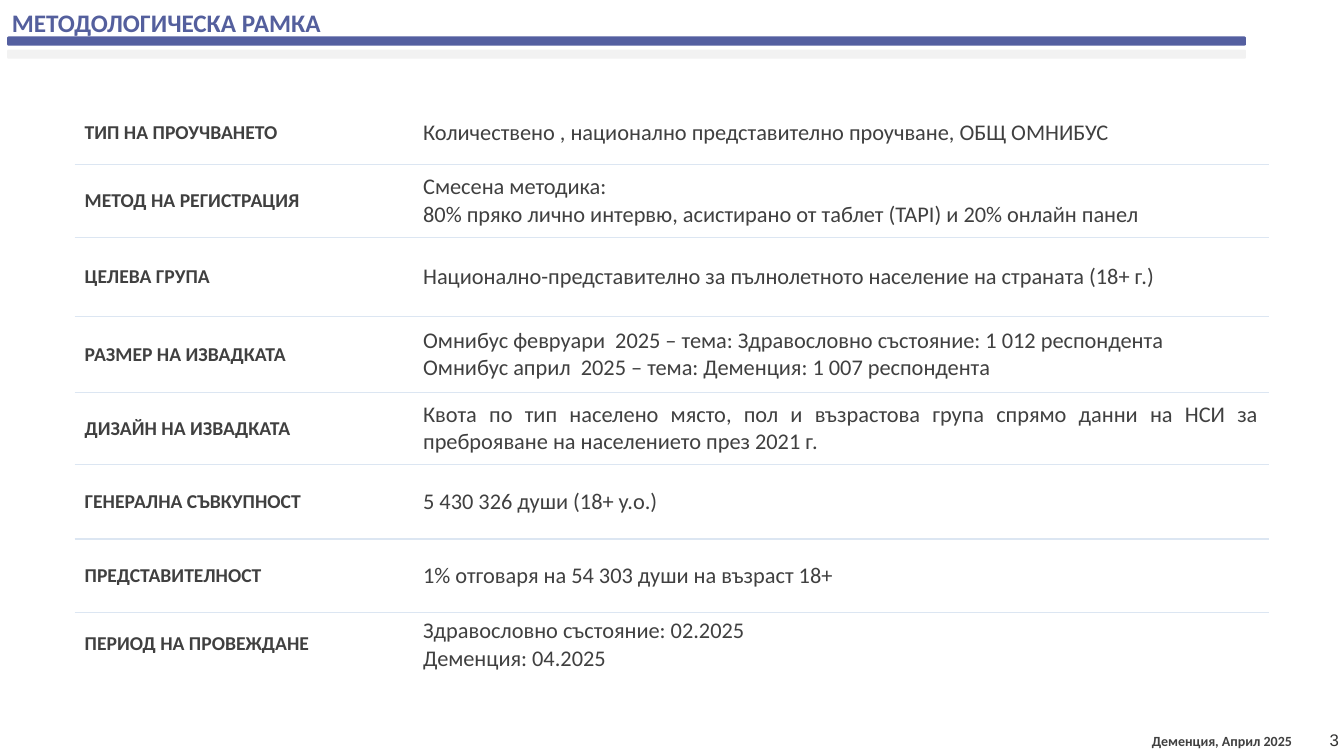
"""Build the methodology slide of a survey report."""
from dataclasses import dataclass

from lxml import etree
from pptx import Presentation
from pptx.dml.color import RGBColor
from pptx.enum.shapes import MSO_SHAPE
from pptx.enum.text import MSO_ANCHOR, PP_ALIGN
from pptx.oxml.ns import qn
from pptx.util import Cm, Pt

ROUND_RECT = MSO_SHAPE.ROUNDED_RECTANGLE
MIDDLE = MSO_ANCHOR.MIDDLE
LEFT, RIGHT, JUSTIFY = PP_ALIGN.LEFT, PP_ALIGN.RIGHT, PP_ALIGN.JUSTIFY


@dataclass(frozen=True)
class Theme:
    font: str = "Calibri"
    number_font: str = "Arial"
    bar: str = "545FA0"
    under_bar: str = "F2F2F2"
    title: str = "545F9D"
    text: str = "404040"
    number: str = "333332"
    rule: str = "DCE6F2"
    white: str = "FFFFFF"
    title_size: int = 18
    body_size: int = 16
    label_size: int = 14
    number_size: int = 12
    footer_size: int = 10


THEME = Theme()
COLUMN_WIDTHS = (8.53, 21.56)
ROWS = [
    (1.57, "ТИП НА ПРОУЧВАНЕТО", JUSTIFY,
     ["Количествено , национално представително проучване, ОБЩ ОМНИБУС"]),
    (1.85, "МЕТОД НА РЕГИСТРАЦИЯ", JUSTIFY,
     ["Смесена методика:",
      "80% пряко лично интервю, асистирано от таблет (TAPI) и 20% онлайн панел"]),
    (1.98, "ЦЕЛЕВА ГРУПА", JUSTIFY,
     ["Национално-представително за пълнолетното население на страната (18+ г.)"]),
    (1.93, "РАЗМЕР НА ИЗВАДКАТА", LEFT,
     ["Омнибус февруари  2025 – тема: Здравословно състояние: 1 012 респондента",
      "Омнибус април  2025 – тема: Деменция: 1 007 респондента"]),
    (1.8, "ДИЗАЙН НА ИЗВАДКАТА", JUSTIFY,
     ["Квота по тип населено място, пол и възрастова група спрямо данни на НСИ "
      "за преброяване на населението през 2021 г."]),
    (1.88, "ГЕНЕРАЛНА СЪВКУПНОСТ", JUSTIFY, ["5 430 326 души (18+ y.o.)"]),
    (1.85, "ПРЕДСТАВИТЕЛНОСТ", JUSTIFY, ["1% отговаря на 54 303 души на възраст 18+"]),
    (1.57, "ПЕРИОД НА ПРОВЕЖДАНЕ", JUSTIFY,
     ["Здравословно състояние: 02.2025", "Деменция: 04.2025"]),
]


def write(tf, lines, size, color, bold=False, align=LEFT, font=THEME.font):
    """Write one paragraph per line in a single style."""
    for i, line in enumerate(lines):
        p = tf.paragraphs[0] if i == 0 else tf.add_paragraph()
        p.text = line
        p.alignment = align
        p.font.name = font
        p.font.size = Pt(size)
        p.font.bold = bold
        p.font.color.rgb = RGBColor.from_string(color)


def add_text(s, box, text, size, color, **style):
    """Add a one-line text box."""
    tf = s.shapes.add_textbox(*map(Cm, box)).text_frame
    tf.word_wrap = True
    write(tf, [text], size, color, **style)


def add_bar(s, top, color):
    """Add a thin rounded bar under the title."""
    sp = s.shapes.add_shape(ROUND_RECT, Cm(0.18), Cm(top), Cm(31.22), Cm(0.23))
    sp.shadow.inherit = False
    sp.fill.solid()
    sp.fill.fore_color.rgb = RGBColor.from_string(color)
    sp.line.fill.background()


def set_border(cell, side, color=None):
    """Draw one cell border, or clear it when no colour is given."""
    ln = etree.SubElement(cell._tc.get_or_add_tcPr(), qn(f"a:ln{side}"), w=str(Pt(1)))
    if color:
        fill = etree.SubElement(ln, qn("a:solidFill"))
        etree.SubElement(fill, qn("a:srgbClr"), val=color)
    else:
        etree.SubElement(ln, qn("a:noFill"))


def style_cell(cell, top_rule, bottom_rule):
    """Give a cell its borders, fill and anchor."""
    set_border(cell, "L")
    set_border(cell, "R")
    set_border(cell, "T", top_rule)
    set_border(cell, "B", bottom_rule)
    cell.fill.solid()
    cell.fill.fore_color.rgb = RGBColor.from_string(THEME.white)
    cell.vertical_anchor = MIDDLE


def add_method_table(s):
    """Add the table of survey parameters with rules between its rows."""
    height = sum(row[0] for row in ROWS)
    frame = s.shapes.add_table(len(ROWS), len(COLUMN_WIDTHS), Cm(1.88), Cm(2.57),
                               Cm(sum(COLUMN_WIDTHS)), Cm(height))
    table = frame.table
    table.first_row = table.horz_banding = False
    for column, width in zip(table.columns, COLUMN_WIDTHS):
        column.width = Cm(width)
    for i, (row_height, label, align, lines) in enumerate(ROWS):
        table.rows[i].height = Cm(row_height)
        label_cell, body_cell = table.cell(i, 0), table.cell(i, 1)
        for cell in (label_cell, body_cell):
            style_cell(cell, THEME.rule if i > 0 else None,
                       THEME.rule if i < len(ROWS) - 1 else None)
        write(label_cell.text_frame, [label], THEME.label_size, THEME.text, bold=True)
        write(body_cell.text_frame, lines, THEME.body_size, THEME.text, align=align)


def main():
    """Build and save the slide."""
    prs = Presentation()
    prs.slide_width, prs.slide_height = Cm(33.87), Cm(19.05)
    s = prs.slides.add_slide(prs.slide_layouts[6])
    add_bar(s, 0.92, THEME.bar)
    add_bar(s, 1.25, THEME.under_bar)
    add_text(s, (28.78, 18.34, 4.34, 0.69), "Деменция, Април 2025",
             THEME.footer_size, THEME.text, bold=True)
    add_text(s, (26.8, 18.26, 7.19, 0.71), "3", THEME.number_size, THEME.number,
             align=RIGHT, font=THEME.number_font)
    add_text(s, (0.05, 0.05, 14.81, 1.02), "МЕТОДОЛОГИЧЕСКА РАМКА",
             THEME.title_size, THEME.title, bold=True)
    add_method_table(s)
    prs.save("out.pptx")


if __name__ == "__main__":
    main()
